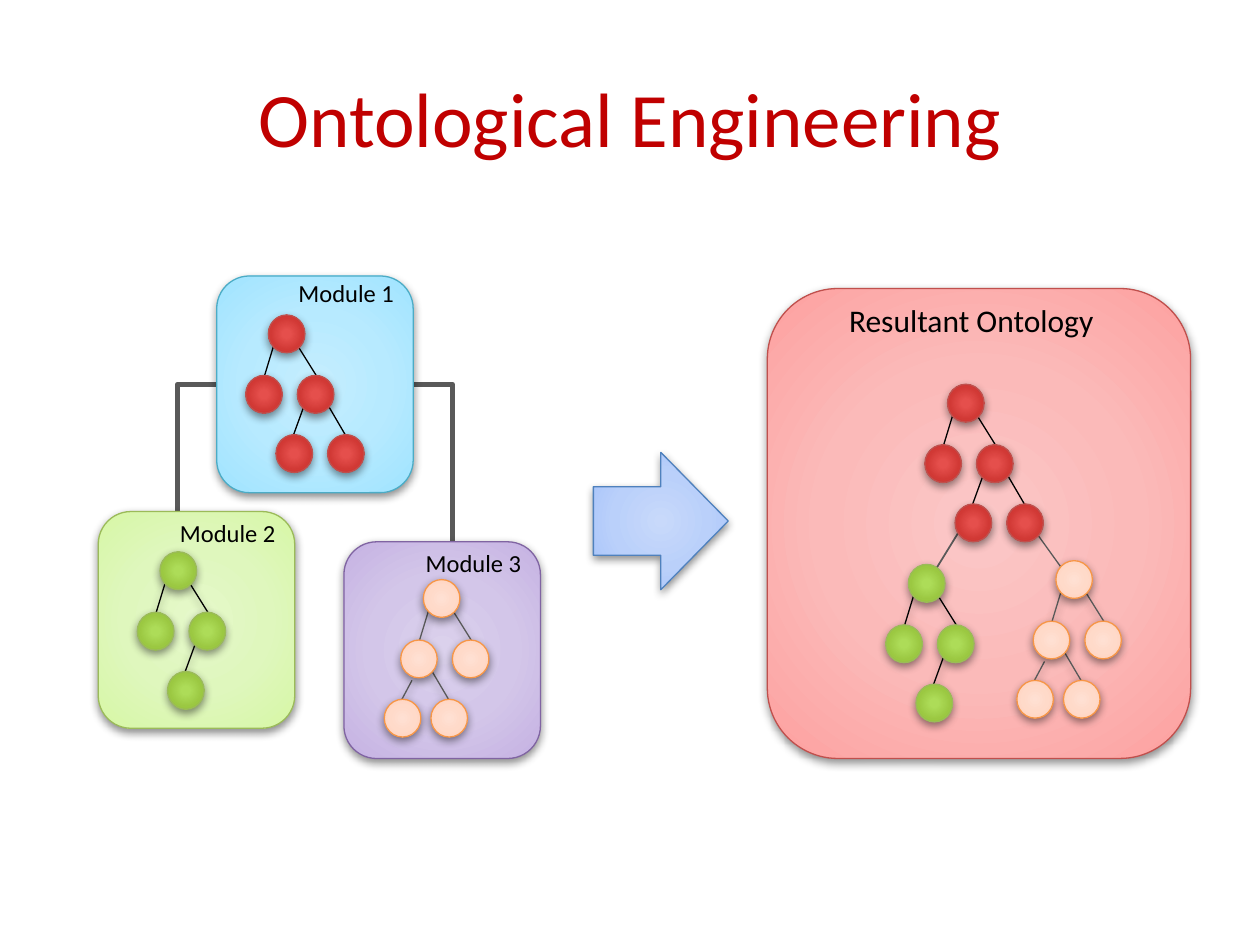
from lxml import etree
from pptx import Presentation
from pptx import util as u
from pptx.dml.color import RGBColor
from pptx.enum import shapes, text
from pptx.oxml import ns

FONT = "Calibri"
NODE_W, NODE_H = 0.29, 0.3

# Gradient stops run from the centre of a shape outwards.
FILLS = {
    "blue": [(0, "C5EDFE"), (50, "B7EAFF"), (97, "A1E4FF"), (100, "9BE3FF")],
    "lime": [(0, "E5F8CA"), (50, "DFF7BD"), (97, "D7F7A7"), (100, "D5F99E")],
    "purple": [(0, "DBD1EC"), (50, "D3C6E9"), (97, "C6B3E3"), (100, "C2ACE3")],
    "pink": [(0, "FBC7C7"), (50, "FBBAB9"), (97, "FDA2A1"), (100, "FF9A98")],
    "sky": [(0, "C8D9FA"), (50, "BAD0FA"), (97, "A3C1FA"), (100, "99BCFD")],
    "red": [(0, "E6504C"), (15, "E54F4C"), (62, "D13935"), (97, "BD2B28"), (100, "BD221E")],
    "green": [(0, "AEDD58"), (15, "ADDC58"), (62, "9BC842"), (97, "8AB535"), (100, "88B42C")],
    "peach": [(0, "FFE0D3"), (50, "FFDAC9"), (97, "FFCFB8"), (100, "FFCBB3")],
}

# Nodes and edges are offsets from the top left of the root node.
TOP_NODES = [(0, 0), (-0.18, 0.48), (0.23, 0.48)]
TOP_EDGES = [(0.04, 0.25, -0.03, 0.48), (0.23, 0.24, 0.38, 0.48)]
INNER_NODE, INNER_EDGE = (0.06, 0.95), (0.28, 0.73, 0.2, 0.95)

# kind: (fill, node outline, edge colour, edge shadow, nodes, edges)
TREES = {
    "red": ("red", "C0504D", "000000", False,
            TOP_NODES + [INNER_NODE, (0.47, 0.95)],
            TOP_EDGES + [INNER_EDGE, (0.47, 0.71, 0.61, 0.95)]),
    "green": ("green", "9BBB59", "000000", True,
              TOP_NODES + [INNER_NODE], TOP_EDGES + [INNER_EDGE]),
    "peach": ("peach", "F79646", "595959", True,
              TOP_NODES + [INNER_NODE, (-0.31, 0.95)],
              TOP_EDGES + [(0.07, 0.73, 0.2, 0.95), (-0.09, 0.8, -0.17, 0.95)]),
}


def rgb(color):
    return RGBColor.from_string(color)


def add_xml(parent, tag, **attrs):
    return etree.SubElement(parent, ns.qn(tag), {k: str(v) for k, v in attrs.items()})


def set_effects(sp, shadow):
    """Replace the theme effect with a soft drop shadow, or with none."""
    effects = add_xml(sp._element.spPr, "a:effectLst")
    if shadow:
        outer = add_xml(effects, "a:outerShdw", blurRad=u.Pt(5), dist=u.Pt(2),
                        dir=90 * 60000, rotWithShape=0)
        add_xml(add_xml(outer, "a:srgbClr", val="000000"), "a:alpha", val=43000)


def set_radial_fill(sp, stops):
    sp.fill.solid()
    solid = sp._element.spPr.find(ns.qn("a:solidFill"))
    grad = etree.Element(ns.qn("a:gradFill"), rotWithShape="1")
    stop_list = add_xml(grad, "a:gsLst")
    for pos, color in stops:
        add_xml(add_xml(stop_list, "a:gs", pos=pos * 1000), "a:srgbClr", val=color)
    add_xml(add_xml(grad, "a:path", path="circle"), "a:fillToRect",
            l=50000, t=50000, r=50000, b=50000)
    sp._element.spPr.replace(solid, grad)


def add_shape(tree, kind, box, fill, outline):
    sp = tree.add_shape(kind, *map(u.Inches, box))
    set_radial_fill(sp, FILLS[fill])
    sp.line.color.rgb = rgb(outline)
    sp.line.width = u.Pt(0.75)
    set_effects(sp, True)


def add_line(tree, ends, color, width=0.75, shadow=False, bent=False):
    sp = tree.add_connector(shapes.MSO_CONNECTOR.STRAIGHT, *map(u.Inches, ends))
    if bent:
        sp._element.spPr.find(ns.qn("a:prstGeom")).set("prst", "bentConnector2")
    sp.line.color.rgb = rgb(color)
    sp.line.width = u.Pt(width)
    set_effects(sp, shadow)


def add_label(tree, box, label, size):
    tf = tree.add_textbox(*map(u.Inches, box)).text_frame
    tf.word_wrap = False
    tf.auto_size = text.MSO_AUTO_SIZE.SHAPE_TO_FIT_TEXT
    tf.text = label
    format_run(tf, size, "000000")


def format_run(tf, size, color):
    font = tf.paragraphs[0].runs[0].font
    font.name, font.size, font.color.rgb = FONT, u.Pt(size), rgb(color)


def add_tree(tree, kind, x, y):
    fill, outline, edge_color, shadow, nodes, edges = TREES[kind]
    for x1, y1, x2, y2 in edges:
        add_line(tree, (x + x1, y + y1, x + x2, y + y2), edge_color, shadow=shadow)
    for dx, dy in nodes:
        add_shape(tree, shapes.MSO_SHAPE.OVAL, (x + dx, y + dy, NODE_W, NODE_H), fill, outline)


def add_title(s, title):
    sp = s.shapes.title
    sp.left, sp.top, sp.width, sp.height = map(u.Inches, (0.5, 0.3, 9, 1.25))
    tf = sp.text_frame
    tf.text = title
    tf.vertical_anchor = text.MSO_ANCHOR.MIDDLE
    tf.paragraphs[0].alignment = text.PP_ALIGN.CENTER
    format_run(tf, 44, "C00000")


def add_module(tree, x, y, fill, outline, label, label_at, kind, root):
    add_shape(tree, shapes.MSO_SHAPE.ROUNDED_RECTANGLE, (x, y, 1.56, 1.72), fill, outline)
    add_label(tree, (*label_at, 0.98, 0.34), label, 14)
    add_tree(tree, kind, *root)


def add_result(tree):
    add_shape(tree, shapes.MSO_SHAPE.ROUNDED_RECTANGLE, (6.09, 2.29, 3.36, 3.73),
              "pink", "C0504D")
    add_line(tree, (7.42, 4.53, 7.66, 4.14), "595959", 1)
    add_line(tree, (8.24, 4.25, 8.42, 4.5), "595959")
    add_tree(tree, "red", 7.52, 3.05)
    add_tree(tree, "green", 7.21, 4.48)
    add_tree(tree, "peach", 8.38, 4.45)
    add_label(tree, (6.64, 2.34, 2.21, 0.4), "Resultant Ontology", 18)


def main():
    prs = Presentation()
    prs.slide_width, prs.slide_height = u.Inches(10), u.Inches(7.5)
    s = prs.slides.add_slide(prs.slide_layouts[5])
    add_title(s, "Ontological Engineering")

    for ends in ((1.72, 3.05, 1.41, 4.06), (3.28, 3.05, 3.59, 4.3)):
        add_line(s.shapes, ends, "595959", 3, bent=True)
    modules = [
        (1.72, 2.19, "blue", "4BACC6", "Module 1", (2.27, 2.16), "red", (2.13, 2.5)),
        (0.78, 4.06, "lime", "9BBB59", "Module 2", (1.33, 4.06), "green", (1.27, 4.38)),
        (2.73, 4.3, "purple", "8064A2", "Module 3", (3.28, 4.3), "peach", (3.36, 4.6)),
    ]
    for module in modules:
        add_module(s.shapes, *module)

    add_result(s.shapes.add_group_shape().shapes)
    add_shape(s.shapes, shapes.MSO_SHAPE.RIGHT_ARROW, (4.71, 3.59, 1.07, 1.09), "sky", "4F81BD")
    prs.save("out.pptx")


if __name__ == "__main__":
    main()
